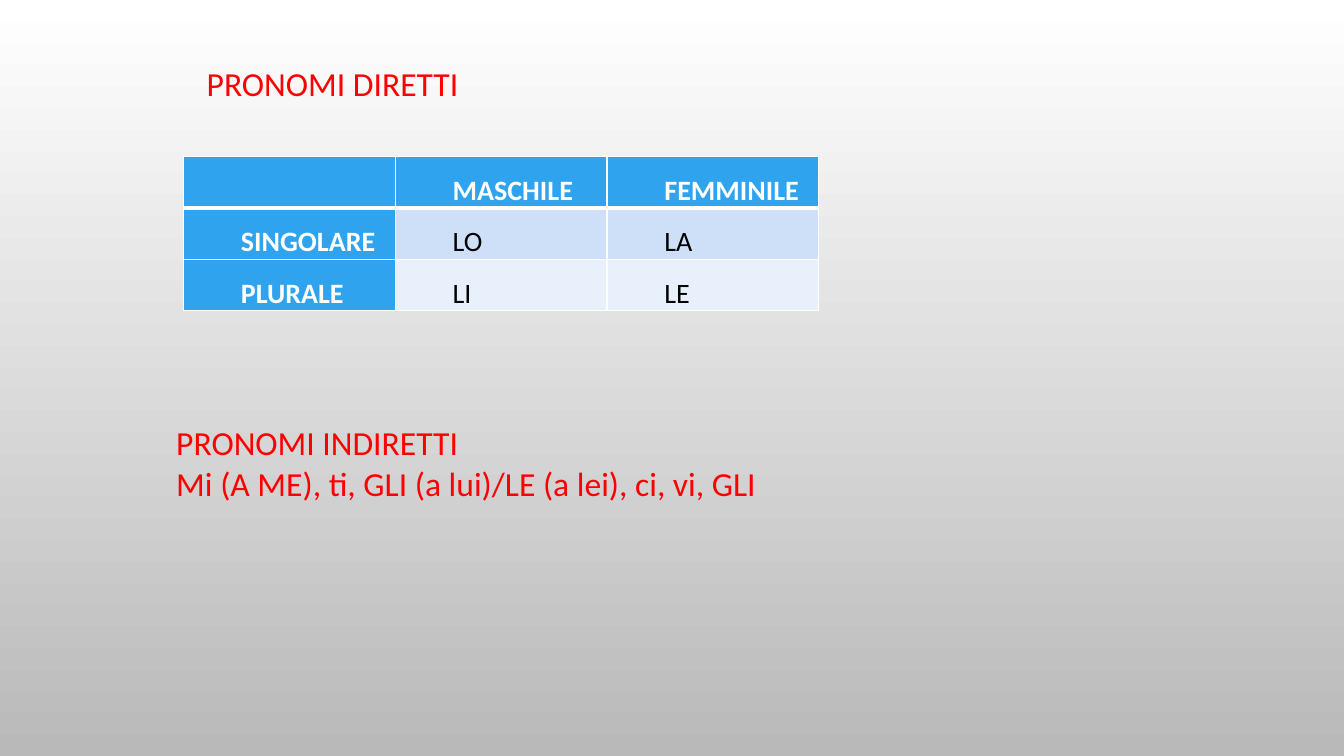
from lxml.etree import SubElement
from pptx import Presentation
from pptx.dml.color import RGBColor
from pptx.enum.text import MSO_ANCHOR, MSO_AUTO_SIZE, PP_ALIGN
from pptx.oxml.ns import qn
from pptx.util import Inches, Pt

COLORS = {"red": "FF0000", "white": "FFFFFF", "black": "000000", "gray": "B9B9B9",
          "header": "2FA3EE", "band": "CDE0F8", "light": "E8F0FC"}


class PronounPage:
    font_name = "Calibri"

    def __init__(self, deck):
        self.page = deck.slides.add_slide(deck.slide_layouts[5])

    def color(self, name):
        return RGBColor.from_string(COLORS[name])

    def background(self, top, bottom):
        fill = self.page.background.fill
        fill.gradient()
        fill.gradient_angle = 270
        for stop, name in zip(fill.gradient_stops, (top, bottom)):
            stop.color.rgb = self.color(name)

    def style(self, paragraph, size, color, bold=False):
        for span in paragraph.runs:
            span.font.name = self.font_name
            span.font.size = Pt(size)
            span.font.bold = bold
            span.font.color.rgb = self.color(color)

    def place(self, box, left, top, width, height, text):
        box.left, box.top = Inches(left), Inches(top)
        box.width, box.height = Inches(width), Inches(height)
        frame = box.text_frame
        frame.text = text
        frame.word_wrap = True
        frame.auto_size = MSO_AUTO_SIZE.NONE
        frame.vertical_anchor = MSO_ANCHOR.TOP
        for paragraph in frame.paragraphs:
            paragraph.alignment = PP_ALIGN.LEFT
            self.style(paragraph, 24, "red")

    def title(self, *place):
        self.place(self.page.shapes.title, *place)

    def text(self, *place):
        self.place(self.page.shapes.add_textbox(0, 0, 0, 0), *place)

    def borders(self, cell, widths):
        properties = cell._tc.get_or_add_tcPr()
        for side, width in zip("LRTB", widths):
            line = SubElement(properties, qn(f"a:ln{side}"), w=str(Pt(width)))
            fill = SubElement(line, qn("a:solidFill"))
            SubElement(fill, qn("a:srgbClr"), val=COLORS["white"])

    def table(self, left, top, column_width, row_height, rows):
        count = len(rows[0])
        table = self.page.shapes.add_table(
            len(rows), count, Inches(left), Inches(top),
            Inches(column_width * count), Inches(row_height * len(rows))).table
        for r, row in enumerate(rows):
            for c, text in enumerate(row):
                cell = table.cell(r, c)
                heading = r == 0 or c == 0
                # Thick rule under the header row
                self.borders(cell, (1, 1, 3 if r == 1 else 1, 3 if r == 0 else 1))
                cell.fill.solid()
                band = "band" if r % 2 else "light"
                cell.fill.fore_color.rgb = self.color("header" if heading else band)
                cell.margin_left = cell.margin_right = Inches(0.07)
                cell.margin_top = cell.margin_bottom = 0
                if not text:
                    continue
                cell.text_frame.text = text
                paragraph = cell.text_frame.paragraphs[0]
                paragraph.line_spacing = 1.5
                indent = paragraph._p.get_or_add_pPr()
                indent.set("marL", str(Inches(0.5)))
                indent.set("indent", "0")
                self.style(paragraph, 20, "white" if heading else "black", heading)


def main():
    deck = Presentation()
    deck.slide_width, deck.slide_height = Inches(13.33), Inches(7.5)
    slide = PronounPage(deck)
    slide.background("white", "gray")

    # Direct pronouns
    slide.title(1.95, 0.57, 12.57, 0.81, "PRONOMI DIRETTI")
    slide.table(1.82, 1.55, 2.1, 0.51, [
        ["", "MASCHILE", "FEMMINILE"],
        ["SINGOLARE", "LO", "LA"],
        ["PLURALE", "LI", "LE"],
    ])

    # Indirect pronouns
    slide.text(1.65, 4.14, 12.57, 1.21,
               "PRONOMI INDIRETTI\nMi (A ME), ti, GLI (a lui)/LE (a lei), ci, vi, GLI")
    deck.save("out.pptx")


if __name__ == "__main__":
    main()
